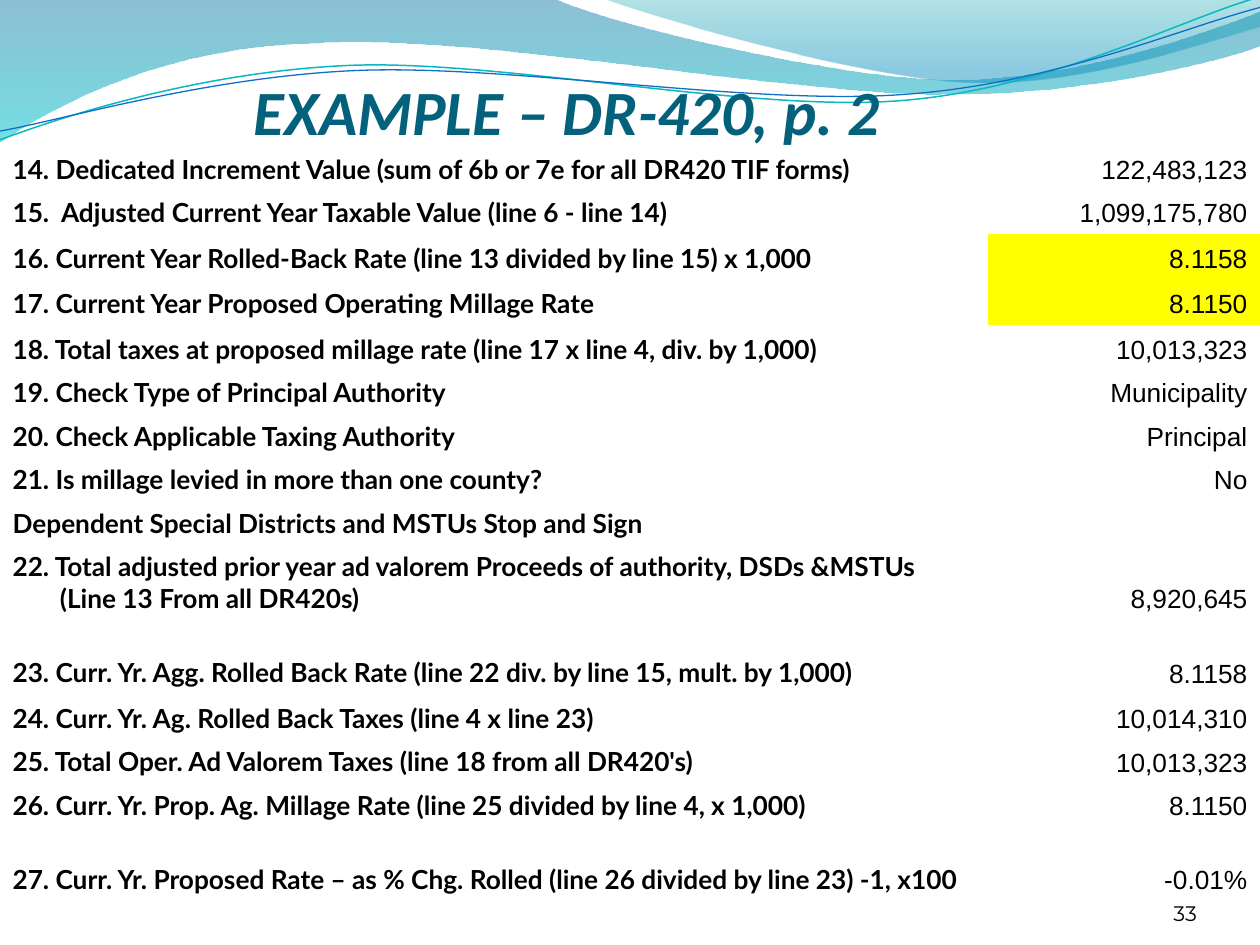
from math import cos, radians, sin

from pptx import Presentation
from pptx.dml.color import RGBColor
from pptx.enum.text import MSO_ANCHOR, MSO_AUTO_SIZE, PP_ALIGN
from pptx.oxml.ns import qn
from pptx.oxml.xmlchemy import OxmlElement
from pptx.util import Pt

LEFT, CENTER, RIGHT = PP_ALIGN.LEFT, PP_ALIGN.CENTER, PP_ALIGN.RIGHT
BOTTOM = MSO_ANCHOR.BOTTOM
NO_AUTOFIT = MSO_AUTO_SIZE.NONE

BLACK = RGBColor(0x00, 0x00, 0x00)
YELLOW = RGBColor(0xFF, 0xFF, 0x00)
TITLE_TEAL = RGBColor(0x04, 0x61, 0x7B)
DEEP_BLUE = RGBColor(0x00, 0x74, 0xA1)
AQUA = RGBColor(0x00, 0xC6, 0xCF)
SEA_GREEN = RGBColor(0x00, 0xA1, 0xA9)
SKY_BLUE = RGBColor(0x00, 0x8B, 0xBF)
LINE_TEAL = RGBColor(0x0A, 0xB8, 0xBF)
LINE_BLUE = RGBColor(0x0F, 0x6F, 0xC6)

NO_TABLE_STYLE = "{2D5ABB26-0587-4C30-8999-92F81FD0307C}"
TILT = -2.7

BROAD_WAVE = [
    (0, 0), (316.8, -0.7),
    (342.7, 12.2, 478.1, 45.4, 545.8, 45.4),
    (614.2, 45.4, 689.8, 18.7, 720, 6.5),
    (720.7, 25.9),
    (707.8, 31.7, 626.4, 54.7, 537.1, 54),
    (447.8, 54, 275, 20.2, 185, 24.5),
    (92.9, 25.9, 33.1, 59.8, -0.7, 81.4),
    (0, 0),
]
RIGHT_WAVE = [
    (344.9, -0.7),
    (366.5, 7.9, 491, 44.6, 553.7, 46.8),
    (616.3, 49.7, 691.9, 23, 720, 15.1),
    (720, 0),
    (344.9, -0.7),
]
TEAL_LINE = [
    (0, 79.9),
    (34.6, 67, 113.8, 41, 199.4, 37.4),
    (284.4, 33.8, 427, 64.1, 513.4, 57.6),
    (599.8, 51.1, 675.4, 10.8, 718.6, -1.4),
]
BLUE_LINE = [
    (0, 74.9),
    (33.8, 69.1, 118.1, 43.9, 203.8, 40.3),
    (290.2, 36.7, 429.8, 60.5, 516.2, 54),
    (601.9, 48.2, 677.5, 15.1, 720, 4.3),
]

SHORT, MEDIUM, TALL = 24.8, 26.1, 42.6
FORM_LINES = [
    (SHORT, "14. Dedicated Increment Value (sum of 6b or 7e for all DR420 TIF forms)", "122,483,123"),
    (SHORT, "15.  Adjusted Current Year Taxable Value (line 6 - line 14)", "1,099,175,780"),
    (MEDIUM, "16. Current Year Rolled-Back Rate (line 13 divided by line 15) x 1,000", "8.1158"),
    (MEDIUM, "17. Current Year Proposed Operating Millage Rate", "8.1150"),
    (MEDIUM, "18. Total taxes at proposed millage rate (line 17 x line 4, div. by 1,000)", "10,013,323"),
    (SHORT, "19. Check Type of Principal Authority", "Municipality"),
    (SHORT, "20. Check Applicable Taxing Authority", "Principal"),
    (SHORT, "21. Is millage levied in more than one county?", "No"),
    (SHORT, "Dependent Special Districts and MSTUs Stop and Sign", ""),
    (TALL, "22. Total adjusted prior year ad valorem Proceeds of authority, DSDs &MSTUs "
           "(Line 13 From all DR420s)", "8,920,645"),
    (TALL, "23. Curr. Yr. Agg. Rolled Back Rate (line 22 div. by line 15, mult. by 1,000)", "8.1158"),
    (MEDIUM, "24. Curr. Yr. Ag. Rolled Back Taxes (line 4 x line 23)", "10,014,310"),
    (SHORT, "25. Total Oper. Ad Valorem Taxes (line 18 from all DR420's)", "10,013,323"),
    (SHORT, "26. Curr. Yr. Prop. Ag. Millage Rate (line 25 divided by line 4, x 1,000)", "8.1150"),
    (TALL, "27. Curr. Yr. Proposed Rate – as % Chg. Rolled (line 26 divided by line 23) -1, x100", "-0.01%"),
]
HIGHLIGHTED_ROWS = (2, 3)


def turn(point, center, degrees):
    angle = radians(degrees)
    dx, dy = point[0] - center[0], point[1] - center[1]
    return (center[0] + dx * cos(angle) - dy * sin(angle),
            center[1] + dx * sin(angle) + dy * cos(angle))


class FormPage:
    label_font, value_font = "Lato", "Arial"
    table_size = 15
    hanging = 27
    cell_inset = 3.38

    def __init__(self, deck):
        self.page = deck.slides.add_slide(deck.slide_layouts[5])

    def format_text(self, para, font, size, color, align, bold=False, italic=False):
        para.alignment = align
        for span in para.runs:
            span.font.name = font
            span.font.size = Pt(size)
            span.font.color.rgb = color
            span.font.bold = bold
            span.font.italic = italic

    def outline(self, segments, close, center=(0, 0), tilt=0):
        points = [turn(segment[i:i + 2], center, -tilt)
                  for segment in segments for i in range(0, len(segment), 2)]
        points = [(Pt(x), Pt(y)) for x, y in points]
        builder = self.page.shapes.build_freeform(*points[0], scale=1.0)
        builder.add_line_segments(points[1:], close=close)
        shape = builder.convert_to_shape()
        shape.shadow.inherit = False
        shape.rotation = tilt
        steps = iter(list(shape.element.iter(qn("a:lnTo"))))
        for segment in segments[1:]:
            step = next(steps)
            if len(segment) == 6:
                bezier = OxmlElement("a:cubicBezTo")
                step.addprevious(bezier)
                for part in (step, next(steps), next(steps)):
                    bezier.append(part[0])
                    part.getparent().remove(part)
        return shape

    def wave(self, segments, stops):
        shape = self.outline(segments, True)
        shape.line.fill.background()
        shape.fill.gradient()
        shape.fill.gradient_angle = 270
        for stop, (position, color, _) in zip(shape.fill.gradient_stops, stops):
            stop.position = position
            stop.color.rgb = color
        colors = shape.element.spPr.iter(qn("a:srgbClr"))
        for color, (_, _, opacity) in zip(colors, stops):
            alpha = OxmlElement("a:alpha")
            alpha.set("val", str(opacity * 1000))
            color.append(alpha)

    def curve(self, segments, center, color, width):
        shape = self.outline(segments, False, center, TILT)
        shape.fill.background()
        shape.line.color.rgb = color
        shape.line.width = Pt(width)

    def place_text(self, box, text, inset_top=0):
        frame = box.text_frame
        frame.text = text
        frame.word_wrap = True
        frame.auto_size = NO_AUTOFIT
        frame.vertical_anchor = BOTTOM
        frame.margin_left = frame.margin_right = frame.margin_bottom = 0
        frame.margin_top = Pt(inset_top)
        return frame.paragraphs[0]

    def title(self, text, left, top, width, height):
        box = self.page.shapes.title
        box.left, box.top, box.width, box.height = Pt(left), Pt(top), Pt(width), Pt(height)
        para = self.place_text(box, text, 3.6)
        self.format_text(para, "Calibri", 36, TITLE_TEAL, CENTER, bold=True, italic=True)
        box.element.getparent().append(box.element)

    def page_number(self, text, left, top, width, height):
        box = self.page.shapes.add_textbox(Pt(left), Pt(top), Pt(width), Pt(height))
        para = self.place_text(box, text)
        self.format_text(para, "Montserrat", 12, BLACK, RIGHT)

    def cell(self, cell, text, font, align, bold, fill):
        cell.text_frame.text = text
        cell.vertical_anchor = BOTTOM
        cell.margin_top = cell.margin_bottom = Pt(self.cell_inset)
        if fill is None:
            cell.fill.background()
        else:
            cell.fill.solid()
            cell.fill.fore_color.rgb = fill
        para = cell.text_frame.paragraphs[0]
        self.format_text(para, font, self.table_size, BLACK, align, bold=bold)
        properties = para._p.get_or_add_pPr()
        properties.set("marL", str(Pt(self.hanging)))
        properties.set("indent", str(-Pt(self.hanging)))
        if not text:
            para._p.get_or_add_endParaRPr().set("sz", str(self.table_size * 100))

    def table(self, lines, left, top, widths):
        height = sum(line[0] for line in lines)
        frame = self.page.shapes.add_table(len(lines), len(widths), Pt(left), Pt(top),
                                           Pt(sum(widths)), Pt(height))
        table = frame.table
        table.first_row = table.horz_banding = False
        table._tbl.tblPr.find(qn("a:tableStyleId")).text = NO_TABLE_STYLE
        for column, width in zip(table.columns, widths):
            column.width = Pt(width)
        for index, (row_height, label, value) in enumerate(lines):
            table.rows[index].height = Pt(row_height)
            fill = YELLOW if index in HIGHLIGHTED_ROWS else None
            self.cell(table.cell(index, 0), label, self.label_font, LEFT, True, None)
            self.cell(table.cell(index, 1), value, self.value_font, RIGHT, False, fill)


def main():
    deck = Presentation()
    deck.slide_width, deck.slide_height = Pt(720), Pt(540)
    form = FormPage(deck)
    form.wave(BROAD_WAVE, [(0, DEEP_BLUE, 45), (1, AQUA, 55)])
    form.wave(RIGHT_WAVE, [(0, SEA_GREEN, 30), (0.8, SKY_BLUE, 45)])
    form.curve(TEAL_LINE, (359.3, 41.4), LINE_TEAL, 0.85)
    form.curve(BLUE_LINE, (359.6, 42.5), LINE_BLUE, 0.75)
    form.page_number("33", 624, 500.4, 60, 28.8)
    form.title("EXAMPLE – DR-420, p. 2", 0, 42, 648, 42.5)
    form.table(FORM_LINES, 0, 84.2, (564.5, 155.5))
    deck.save("out.pptx")


if __name__ == "__main__":
    main()
